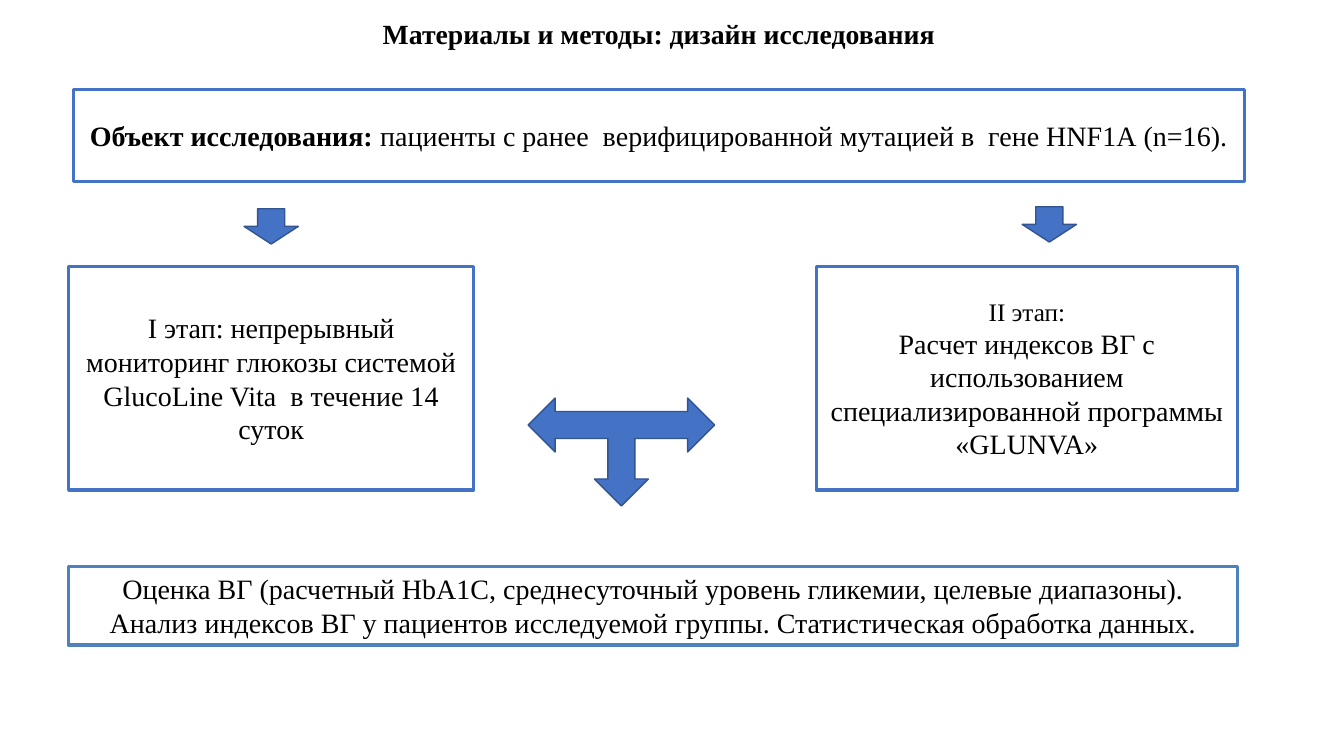
from pptx import Presentation, util as u
from pptx.dml.color import RGBColor
from pptx.enum import shapes, text

COLORS = {"text": "000000", "paper": "FFFFFF", "blue": "4472C4",
          "steel": "4F81BD", "edge": "325491"}
SHAPE = shapes.MSO_SHAPE


class StudyDesign:
    """Holds the style and the current slide of the study design scheme."""

    font = "Times New Roman"

    def __init__(self, prs):
        self.s = prs.slides.add_slide(prs.slide_layouts[6])

    def color(self, name):
        return RGBColor.from_string(COLORS[name])

    def add_text(self, sp, paragraphs, spacing=None):
        tf = sp.text_frame
        tf.word_wrap = True
        tf.vertical_anchor = text.MSO_ANCHOR.MIDDLE
        for i, runs in enumerate(paragraphs):
            p = tf.paragraphs[0] if i == 0 else tf.add_paragraph()
            p.alignment = text.PP_ALIGN.CENTER
            p.line_spacing = spacing
            for words, size, bold in runs:
                r = p.add_run()
                r.text = words
                r.font.name = self.font
                r.font.size = u.Pt(size)
                r.font.bold = bold
                r.font.color.rgb = self.color("text")

    def shape(self, kind, at, fill, line, width):
        sp = self.s.shapes.add_shape(kind, *map(u.Cm, at))
        sp.shadow.inherit = False
        sp.fill.solid()
        sp.fill.fore_color.rgb = self.color(fill)
        sp.line.color.rgb = self.color(line)
        sp.line.width = u.Pt(width)
        return sp

    def title(self, at, words):
        sp = self.s.shapes.add_textbox(*map(u.Cm, at))
        self.add_text(sp, [[(words, 19.8, True)]], 0.9)

    def box(self, at, paragraphs, kind=SHAPE.RECTANGLE, line="blue", width=2.25):
        self.add_text(self.shape(kind, at, "paper", line, width), paragraphs)

    def arrow(self, kind, at, rotation=0):
        self.shape(kind, at, "blue", "edge", 1).rotation = rotation


def main():
    prs = Presentation()
    prs.slide_width, prs.slide_height = u.Cm(33.87), u.Cm(19.05)
    d = StudyDesign(prs)
    left, stage_top, stage_height = 1.73, 6.71, 5.64

    d.title((2, 0.42, 29.2, 0.94), "Материалы и методы: дизайн исследования")
    d.box((left, 14.27, 29.46, 1.98), [
        [("Оценка ВГ (расчетный HbA1C, среднесуточный уровень гликемии, "
          "целевые диапазоны).", 20, False)],
        [("Анализ индексов ВГ у пациентов исследуемой группы. "
          "Статистическая обработка данных.", 20, False)],
    ], SHAPE.FLOWCHART_PROCESS, "steel", 2.5)
    d.box((1.85, 2.26, 29.51, 2.31), [
        [("Объект исследования: ", 20, True),
         ("пациенты с ранее  верифицированной мутацией в  гене HNF1А (n=16).",
          20, False)],
    ])
    d.box((left, stage_top, 10.21, stage_height), [
        [("I этап: непрерывный мониторинг глюкозы системой "
          "GlucoLine Vita  в течение 14 суток", 20, False)],
    ])
    d.box((20.57, stage_top, 10.62, stage_height), [
        [("II этап:", 18, False)],
        [("Расчет индексов ВГ с использованием специализированной "
          "программы «GLUNVA»", 20, False)],
    ])
    d.arrow(SHAPE.LEFT_RIGHT_UP_ARROW, (13.31, 10.03, 4.7, 2.72), 180)
    for x, y in ((6.15, 5.26), (25.76, 5.21)):
        d.arrow(SHAPE.DOWN_ARROW, (x, y, 1.37, 0.89))

    prs.save("out.pptx")


if __name__ == "__main__":
    main()
